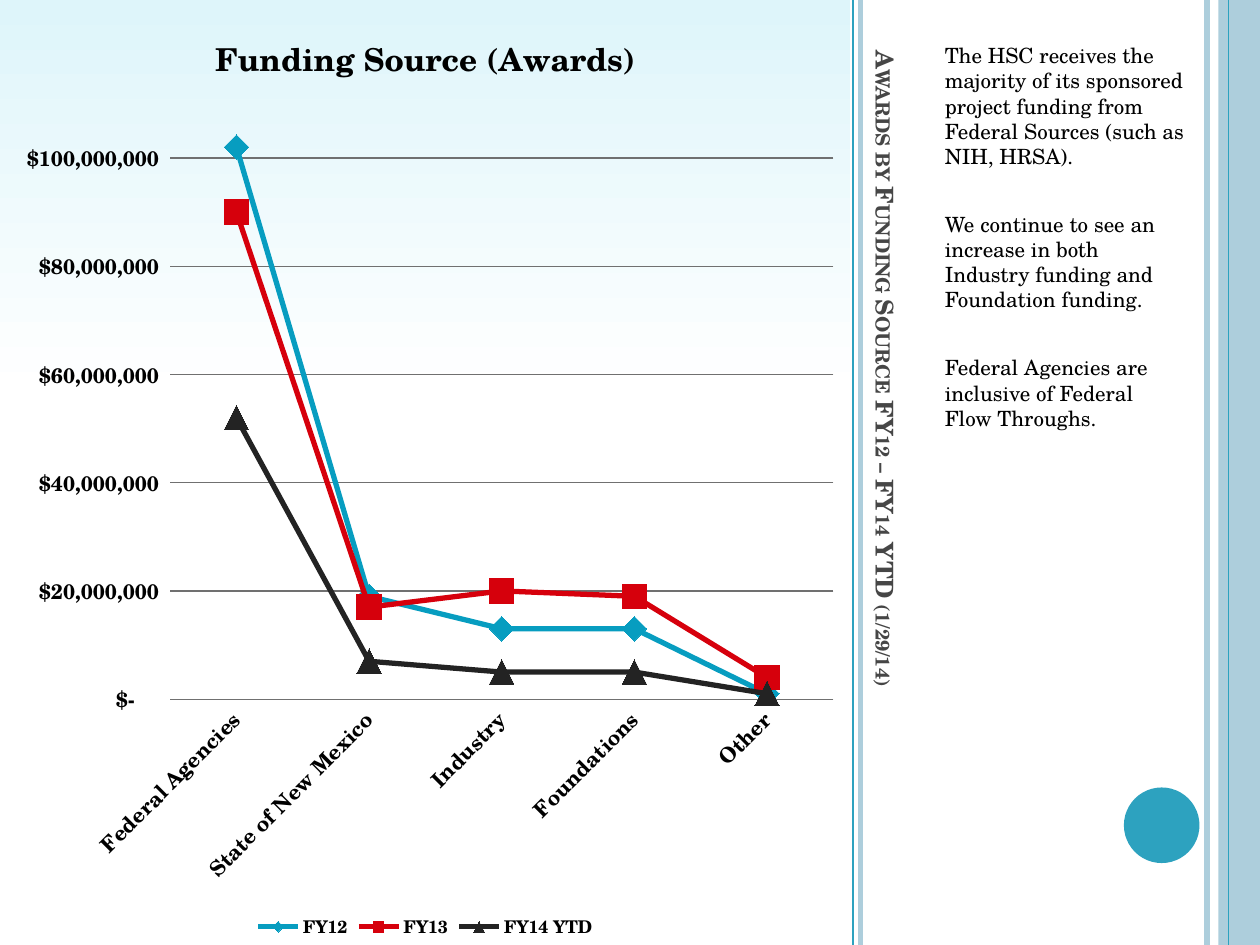
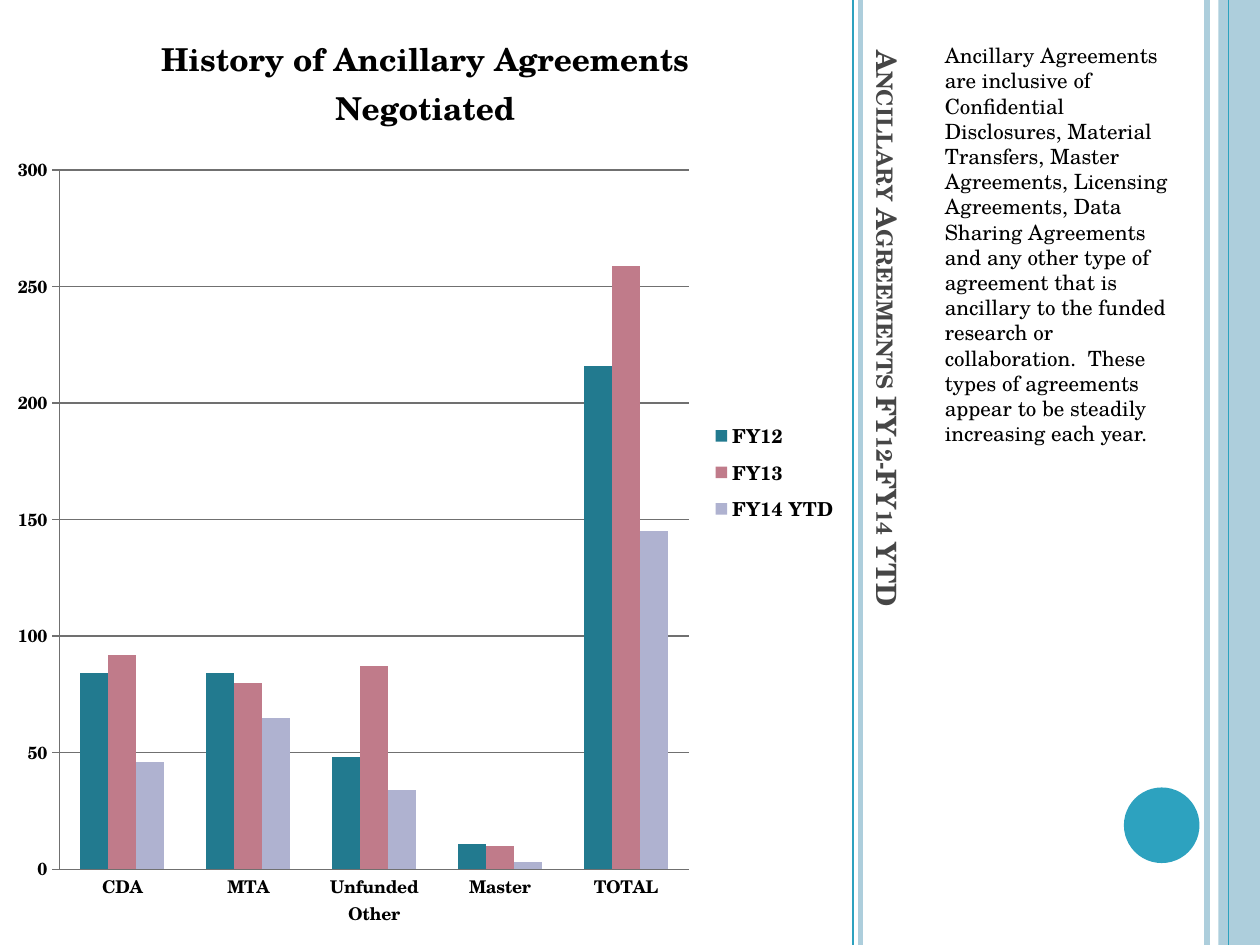
"""Build two slides on awards and ancillary agreements, each a chart with a side note."""
from lxml import etree
from pptx import Presentation
from pptx.chart.data import CategoryChartData as Data
from pptx.dml.color import RGBColor
from pptx.enum.chart import XL_CHART_TYPE as Kind, XL_LEGEND_POSITION as Spot
from pptx.enum.chart import XL_MARKER_STYLE as Mark, XL_TICK_MARK as Tick
from pptx.enum.shapes import MSO_CONNECTOR as Join, MSO_SHAPE as Form
from pptx.enum.text import MSO_ANCHOR as Anchor, MSO_AUTO_SIZE as Fit, PP_ALIGN as Align
from pptx.oxml import parse_xml
from pptx.oxml.ns import nsdecls, qn
from pptx.util import Pt

SCALE = 9144
FACE = "TeX Gyre Schola"
BLACK, SLATE, GREY = "000000", "464646", "707070"
TEAL, PALE = "2DA2BF", "ADCEDC"
CASH = '_("$"* #,##0_);_("$"* \\(#,##0\\);_("$"* "-"??_);_(@_)'
YEARS = ("FY12", "FY13", "FY14 YTD")


def px(*nums):
    return [num * SCALE for num in nums]


def hue(code):
    return RGBColor.from_string(code)


class Deck:
    def __init__(self):
        self.prs = Presentation()
        self.prs.slide_width, self.prs.slide_height = px(1000, 750)
        self.page = None

    def start(self, title, size):
        self.page = self.prs.slides.add_slide(self.prs.slide_layouts[5])
        self.rule(958, PALE, 3)
        self.block(Form.OVAL, (892, 625, 60, 60), TEAL)
        self.block(Form.RECTANGLE, (967, 0, 33, 750), PALE)
        self.rule(975, TEAL, 0.75)
        self.rule(683, PALE, 3)
        self.rule(677, TEAL, 1)
        self.head(title, size)

    def rule(self, x, color, width):
        line = self.page.shapes.add_connector(Join.STRAIGHT, *px(x, 0, x, 750))
        self.trace(line.line, color, width)
        etree.SubElement(line._element.spPr, qn("a:effectLst"))

    def block(self, form, box, color):
        shape = self.page.shapes.add_shape(form, *px(*box))
        shape.shadow.inherit = False
        self.paint(shape.fill, color)
        shape.line.fill.background()

    def paint(self, fill, color):
        fill.solid()
        fill.fore_color.rgb = hue(color)

    def trace(self, line, color, width):
        line.color.rgb = hue(color)
        line.width = Pt(width)

    def style(self, font, size, color=BLACK, bold=False):
        font.name, font.size, font.bold = FACE, Pt(size), bold
        font.color.rgb = hue(color)

    def add_text(self, para, text, size, color=BLACK, bold=False):
        run = para.add_run()
        run.text = text
        self.style(run.font, size, color, bold)
        return run

    def head(self, text, size):
        box = self.page.shapes.title
        box.left, box.top, box.width, box.height = px(366, 350, 690, 50)
        box.rotation = 90
        frame = box.text_frame
        frame.auto_size = Fit.NONE
        frame.word_wrap = True
        frame.vertical_anchor = Anchor.BOTTOM
        para = frame.paragraphs[0]
        para.alignment = Align.LEFT
        run = self.add_text(para, text, size, SLATE, True)
        run._r.get_or_add_rPr().set("cap", "small")

    def note(self, texts, height):
        box = self.page.shapes.add_textbox(*px(740, 29, 210, height))
        frame = box.text_frame
        frame.word_wrap = True
        for i, text in enumerate(texts):
            para = frame.paragraphs[0] if i == 0 else frame.add_paragraph()
            para.space_before = Pt(20.4 if i else 1)
            para.space_after = Pt(4)
            self.add_text(para, text, 12)

    def chart(self, kind, title, cats, rows, plot, spot, key):
        data = Data()
        data.categories = cats
        for name, vals in zip(YEARS, rows):
            data.add_series(name, vals)
        frame = self.page.shapes.add_chart(kind, *px(0, 0, 675, 750), data)
        chart = frame.chart
        self.style(chart.font, 10)
        chart.has_title = True
        para = chart.chart_title.text_frame.paragraphs[0]
        self.add_text(para, title, 18, BLACK, True)
        chart.has_legend = True
        chart.legend.position = spot
        chart.legend.include_in_layout = False
        self.style(chart.legend.font, key, BLACK, True)
        chart.plots[0].vary_by_categories = False
        self.place(chart, plot)
        return chart

    def place(self, chart, plot):
        area = chart._chartSpace.chart.plotArea
        for old in area.findall(qn("c:layout")):
            area.remove(old)
        spots = "".join(f'<c:{tag} val="{val}"/>' for tag, val in zip("xywh", plot))
        area.insert(0, parse_xml(
            f'<c:layout {nsdecls("c")}><c:manualLayout><c:layoutTarget val="inner"/>'
            f'<c:xMode val="edge"/><c:yMode val="edge"/>{spots}'
            "</c:manualLayout></c:layout>"))

    def axes(self, chart, size, top, step, tick):
        cat, val = chart.category_axis, chart.value_axis
        for axis in (cat, val):
            self.style(axis.tick_labels.font, size, BLACK, True)
            axis.major_tick_mark = axis.minor_tick_mark = Tick.NONE
            self.trace(axis.format.line, GREY, 0.75)
        val.major_tick_mark = tick
        val.minimum_scale, val.maximum_scale, val.major_unit = 0, top, step
        val.has_major_gridlines = True
        self.trace(val.major_gridlines.format.line, GREY, 0.75)

    def lines(self, chart, colors, marks):
        for row, color, mark in zip(chart.plots[0].series, colors, marks):
            row.smooth = False
            self.trace(row.format.line, color, 3)
            row.marker.style, row.marker.size = mark, 14
            self.paint(row.marker.format.fill, color)
            row.marker.format.line.fill.background()

    def bars(self, chart, colors):
        chart.plots[0].gap_width, chart.plots[0].overlap = 150, 0
        for row, color in zip(chart.plots[0].series, colors):
            self.paint(row.format.fill, color)

    def fade(self, chart, stops):
        marks = "".join(f'<a:gs pos="{pos * 1000}"><a:srgbClr val="{hue(color)}"/></a:gs>'
                        for pos, color in stops)
        chart._chartSpace.chart.addnext(parse_xml(
            f'<c:spPr {nsdecls("c", "a")}><a:gradFill><a:gsLst>{marks}</a:gsLst>'
            '<a:lin ang="5400000" scaled="0"/></a:gradFill><a:ln><a:noFill/></a:ln></c:spPr>'))


def awards(deck):
    deck.start("Awards by Funding Source FY12 – FY14 YTD (1/29/14)", 14)
    deck.note((
        "The HSC receives the majority of its sponsored project funding from "
        "Federal Sources (such as NIH, HRSA).",
        "We continue to see an increase in both Industry funding and Foundation funding.",
        "Federal Agencies are inclusive of Federal Flow Throughs."), 346)
    cats = ("Federal Agencies", "State of New Mexico", "Industry", "Foundations", "Other")
    mills = ((102, 19, 13, 13, 1), (90, 17, 20, 19, 4), (52, 7, 5, 5, 1))
    rows = [[num * 1000000 for num in row] for row in mills]
    chart = deck.chart(Kind.LINE_MARKERS, "Funding Source (Awards)", cats, rows,
                       (0.2, 0.11, 0.78, 0.63), Spot.BOTTOM, 10)
    deck.axes(chart, 12, 110000000, 20000000, Tick.NONE)
    chart.value_axis.format.line.fill.background()
    labels = chart.value_axis.tick_labels
    labels.number_format, labels.number_format_is_linked = CASH, False
    chart.category_axis._element.txPr.bodyPr.set("rot", "-2700000")
    deck.lines(chart, ("079DC0", "D6000C", "232323"),
               (Mark.DIAMOND, Mark.SQUARE, Mark.TRIANGLE))
    deck.fade(chart, ((0, "DEF5FA"), (42, "FFFFFF"), (100, "FFFFFF")))


def deals(deck):
    deck.start("Ancillary Agreements FY12-FY14 YTD", 16)
    deck.note((
        "Ancillary Agreements are inclusive of Confidential Disclosures, Material "
        "Transfers, Master Agreements, Licensing Agreements, Data Sharing Agreements "
        "and any other type of agreement that is ancillary to the funded research or "
        "collaboration.  These types of agreements appear to be steadily increasing "
        "each year.",), 321)
    cats = ("CDA", "MTA", "Unfunded Other", "Master", "TOTAL")
    rows = ((84, 84, 48, 11, 216), (92, 80, 87, 10, 259), (46, 65, 34, 3, 145))
    chart = deck.chart(Kind.COLUMN_CLUSTERED, "History of Ancillary Agreements Negotiated",
                       cats, rows, (0.07, 0.18, 0.74, 0.74), Spot.RIGHT, 11)
    deck.axes(chart, 10, 300, 50, Tick.OUTSIDE)
    deck.bars(chart, ("227A8F", "C07B8A", "AFB2D0"))


def main():
    deck = Deck()
    awards(deck)
    deals(deck)
    deck.prs.save("out.pptx")


if __name__ == "__main__":
    main()
